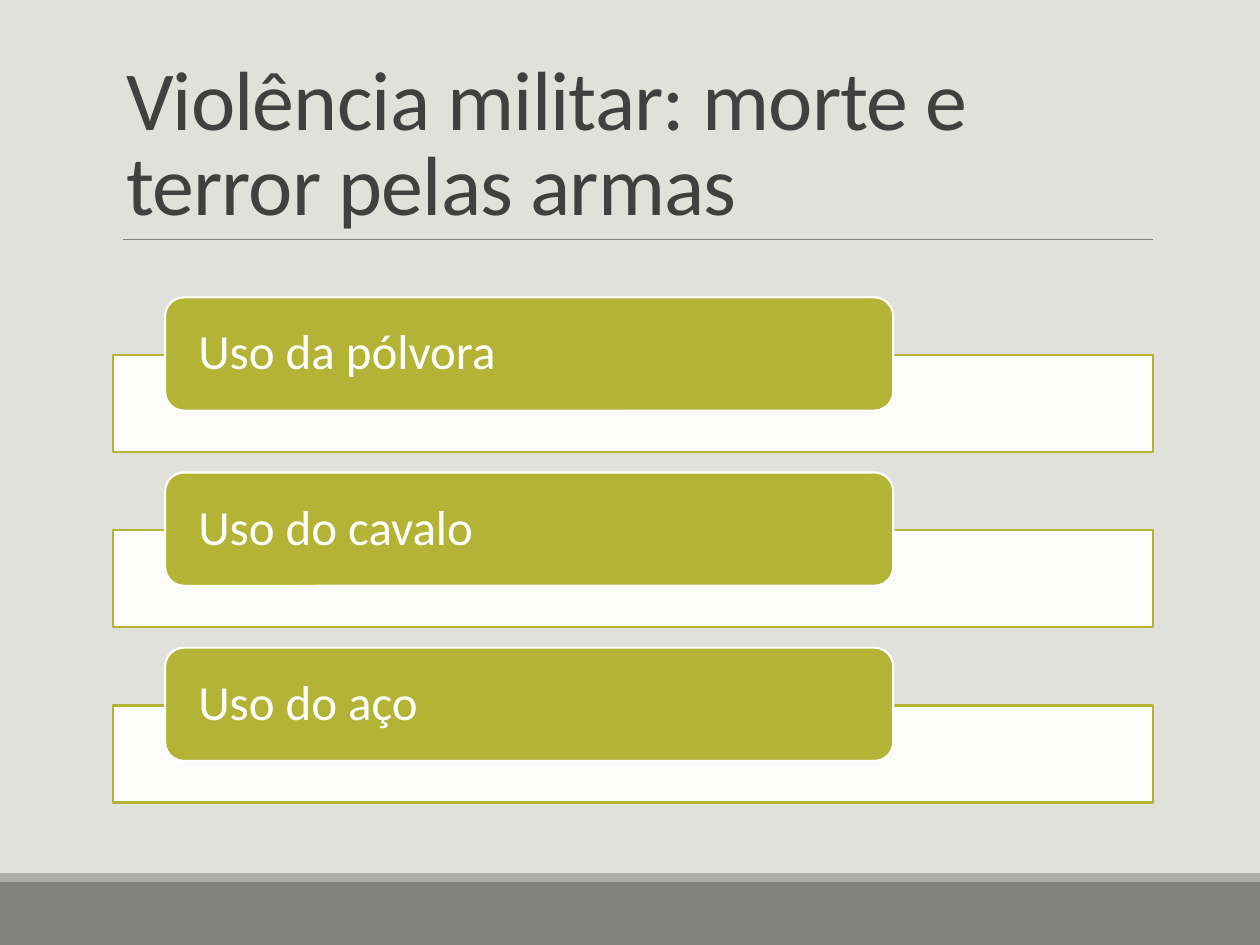
import pptx
import pptx.util
import pptx.dml.color
import pptx.enum.shapes
import pptx.enum.text
import lxml.etree

Inches, Pt = pptx.util.Inches, pptx.util.Pt
SHAPE = pptx.enum.shapes.MSO_SHAPE
ANCHOR = pptx.enum.text.MSO_ANCHOR
ALIGN = pptx.enum.text.PP_ALIGN

TITLE = "Violência militar: morte e terror pelas armas"
ITEMS = ["Uso da pólvora", "Uso do cavalo", "Uso do aço"]
FOOTER = [(7, 0.5, "82847C"), (6.93, 0.07, "ACADA8")]  # top, height, colour
GREEN, WHITE = "B3B435", "FFFFFF"
LEFT, WIDTH = 0.9, 8.25
TOP, STEP = 2.36, 1.39
DROP = 0.46  # from the top of a label to the top of its bar


def rgb(code):
    return pptx.dml.color.RGBColor.from_string(code)


def tag(name):
    return "{http://schemas.openxmlformats.org/drawingml/2006/main}" + name


def apply(target, **values):
    for name, value in values.items():
        setattr(target, name, value)


def box(slide, kind, place, fill, line=None):
    shape = slide.shapes.add_shape(kind, *map(Inches, place))
    shape.shadow.inherit = False
    shape.fill.solid()
    shape.fill.fore_color.rgb = rgb(fill)
    if line:
        shape.line.color.rgb = rgb(line)
        shape.line.width = Pt(1.25)
    else:
        shape.line.fill.background()
    return shape


def write(shape, text, size, color, spacing, **frame):
    """Set one left-aligned paragraph and return its run."""
    apply(shape.text_frame, word_wrap=True, **frame)
    para = shape.text_frame.paragraphs[0]
    apply(para, alignment=ALIGN.LEFT, line_spacing=spacing)
    run = para.add_run()
    run.text = text
    apply(run.font, name="Calibri", size=Pt(size))
    run.font.color.rgb = rgb(color)
    return run


def head(slide):
    title = slide.shapes.title
    apply(title, left=Inches(LEFT), top=Inches(0.31),
          width=Inches(WIDTH), height=Inches(1.59))
    run = write(title, TITLE, 48, "404040", 0.85, vertical_anchor=ANCHOR.BOTTOM,
                auto_size=pptx.enum.text.MSO_AUTO_SIZE.NONE)
    run.font._element.set("spc", "-50")

    rule = slide.shapes.add_connector(
        pptx.enum.shapes.MSO_CONNECTOR.STRAIGHT,
        *map(Inches, (0.98, 1.9, LEFT + WIDTH, 1.9)))
    rule.line.color.rgb = rgb("808080")
    rule.line.width = Pt(0.5)
    lxml.etree.SubElement(rule._element.spPr, tag("effectLst"))


def item(slide, text, top):
    """Draw a translucent bar with its label overlapping the top edge."""
    bar = box(slide, SHAPE.RECTANGLE, (LEFT, top + DROP, WIDTH, 0.77), WHITE, GREEN)
    color = bar._element.spPr.find(tag("solidFill"))[0]
    lxml.etree.SubElement(color, tag("alpha"), val="90000")
    label = box(slide, SHAPE.ROUNDED_RECTANGLE, (1.31, top, 5.78, 0.9), GREEN, WHITE)
    write(label, text, 28, WHITE, 0.9, vertical_anchor=ANCHOR.MIDDLE,
          margin_left=Inches(0.22), margin_right=Inches(0.22),
          margin_top=0, margin_bottom=0)


def main():
    deck = pptx.Presentation()
    apply(deck, slide_width=Inches(10), slide_height=Inches(7.5))
    slide = deck.slides.add_slide(deck.slide_layouts[5])
    slide.background.fill.solid()
    slide.background.fill.fore_color.rgb = rgb("E1E1DB")
    for top, height, fill in FOOTER:
        box(slide, SHAPE.RECTANGLE, (0, top, 10, height), fill)
    head(slide)
    for i, text in enumerate(ITEMS):
        item(slide, text, TOP + i * STEP)
    deck.save("out.pptx")


if __name__ == "__main__":
    main()
